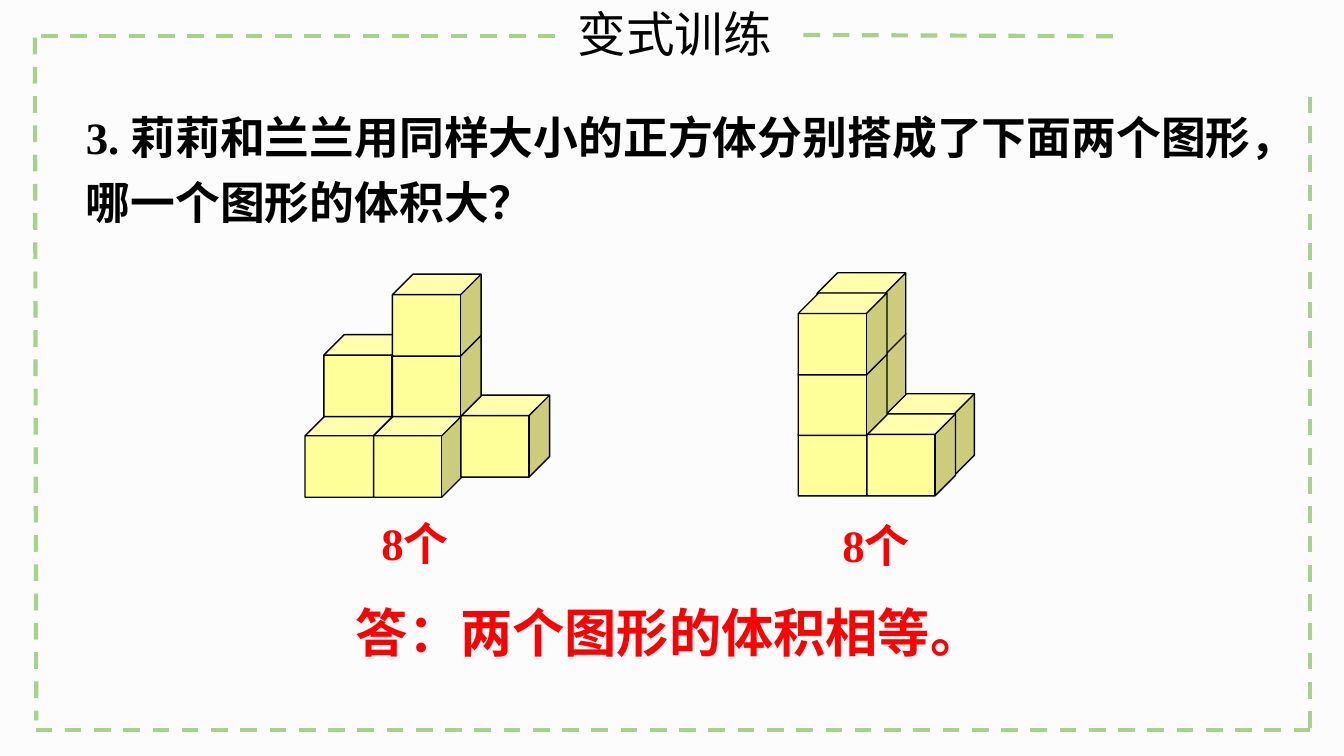
from lxml import etree
from pptx import Presentation
from pptx.dml.color import RGBColor
from pptx.enum.dml import MSO_LINE
from pptx.enum.shapes import MSO_CONNECTOR, MSO_SHAPE
from pptx.oxml.ns import qn
from pptx.util import Inches, Pt

STRAIGHT = MSO_CONNECTOR.STRAIGHT
CUBE = MSO_SHAPE.CUBE
DASH = MSO_LINE.DASH
BACKGROUND = RGBColor(0xFC, 0xFC, 0xFC)
GREEN = RGBColor(0xA9, 0xD1, 0x8E)
YELLOW = RGBColor(0xFF, 0xFF, 0x99)
BLACK = RGBColor(0, 0, 0)
RED = RGBColor(0xFF, 0, 0)
SANS = "Noto Sans CJK SC"
SERIF = "Times New Roman"

FRAME = [
    (0.26, 0.28, 0.27, 5.36),
    (9.75, 0.72, 9.75, 5.43),
    (9.75, 5.43, 0.27, 5.43),
    (8.28, 0.27, 5.92, 0.26),
    (4.13, 0.27, 0.27, 0.27),
]
LEFT_SOLID = [(0, 0, 0), (1, 0, 0), (0, 1, 0), (1, 1, 0),
              (0, 0, 1), (2, 0, 0), (1, 0, 1), (1, 0, 2)]
RIGHT_SOLID = [(0, 0, 0), (1, 0, 0), (0, 1, 0), (1, 1, 0),
               (0, 0, 1), (0, 0, 2), (0, 1, 1), (0, 1, 2)]


def add_dashed_line(s, x1, y1, x2, y2):
    """Draw one dashed side of the frame."""
    line = s.shapes.add_connector(
        STRAIGHT, Inches(x1), Inches(y1), Inches(x2), Inches(y2))
    line.line.color.rgb = GREEN
    line.line.width = Pt(2.25)
    line.line.dash_style = DASH
    etree.SubElement(line._element.spPr, qn("a:effectLst"))


def add_text(s, text, x, y, w, h, size=24, font=SERIF, color=BLACK,
             bold=True, spacing=None, ending=""):
    """Add a wrapped paragraph, with an optional ending in the serif font."""
    tf = s.shapes.add_textbox(Inches(x), Inches(y), Inches(w), Inches(h)).text_frame
    tf.word_wrap = True
    p = tf.paragraphs[0]
    if spacing:
        p.line_spacing = spacing
    for part, name in ((text, font), (ending, SERIF)):
        if part:
            r = p.add_run()
            r.text = part
            r.font.size = Pt(size)
            r.font.name = name
            r.font.bold = bold
            r.font.color.rgb = color
            etree.SubElement(r.font._element, qn("a:ea"), typeface=SANS)


def add_solid(s, x, y, cubes):
    """Stack cubes, given as (column, row, level), into one group."""
    group = s.shapes.add_group_shape()
    for column, row, level in cubes:
        sp = group.shapes.add_shape(
            CUBE,
            Inches(x + 0.51 * column - 0.14 * row),
            Inches(y + 0.15 * row - 0.45 * level),
            Inches(0.66), Inches(0.61))
        sp.adjustments[0] = 0.25
        sp.shadow.inherit = False
        sp.fill.solid()
        sp.fill.fore_color.rgb = YELLOW
        sp.line.color.rgb = BLACK
        sp.line.width = Pt(0.75)


def main():
    """Build the slide and save it."""
    prs = Presentation()
    prs.slide_width = Inches(10)
    prs.slide_height = Inches(10 * 9 / 16)
    s = prs.slides.add_slide(prs.slide_layouts[6])
    s.background.fill.solid()
    s.background.fill.fore_color.rgb = BACKGROUND

    for side in FRAME:
        add_dashed_line(s, *side)
    add_text(s, "变式训练", 4.2, -0.02, 1.73, 0.54, size=26, font=SANS, bold=False)
    add_text(s, "3. 莉莉和兰兰用同样大小的正方体分别搭成了下面两个图形，哪一个图形的体积大？",
             0.54, 0.69, 8.97, 1.07, spacing=1.2)
    add_solid(s, 6.08, 2.93, RIGHT_SOLID)
    add_solid(s, 2.41, 2.94, LEFT_SOLID)
    add_text(s, "答：两个图形的体积相等", 2.55, 4.42, 4.72, 0.57,
             size=28, font=SANS, color=RED, ending="。")
    for x, y in ((2.74, 3.79), (6.17, 3.8)):
        add_text(s, "8个", x, y, 0.93, 0.5, color=RED)

    prs.save("out.pptx")


if __name__ == "__main__":
    main()
